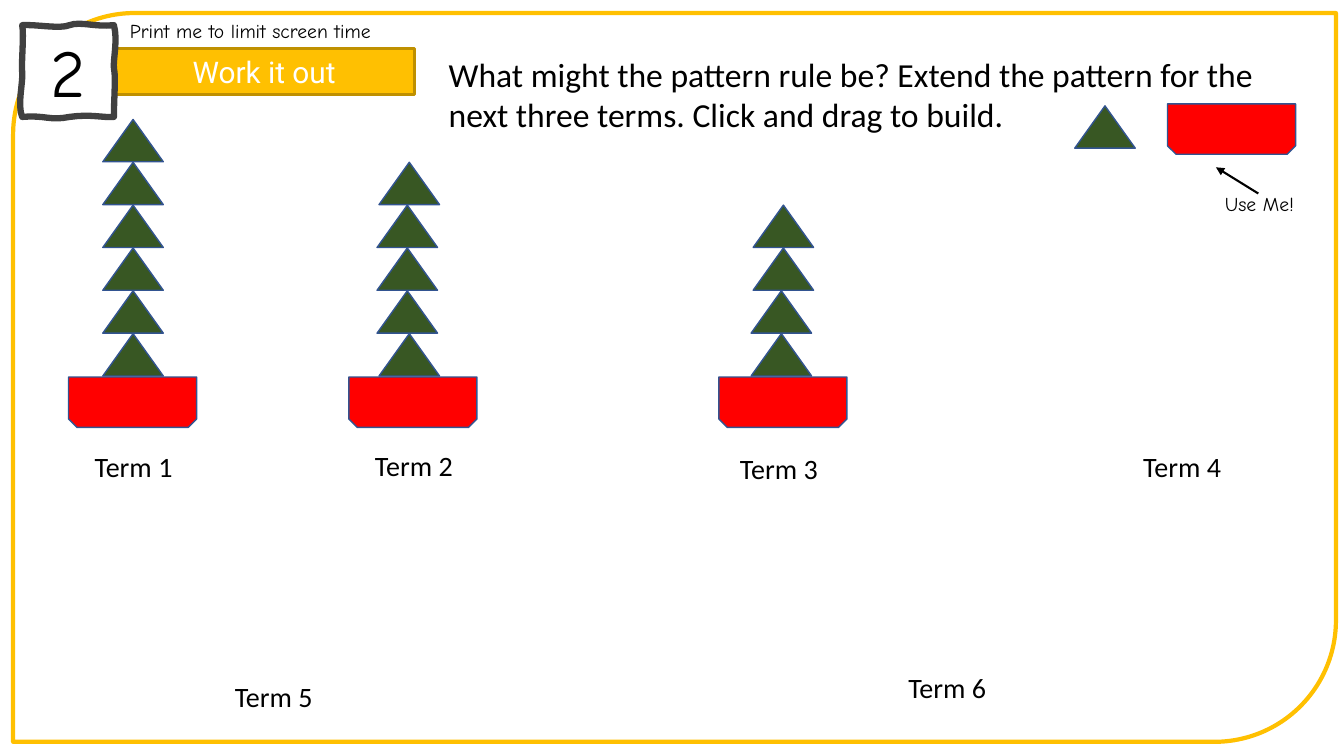
from pptx import Presentation
from pptx import util as u
from pptx.dml.color import RGBColor
from pptx.enum import shapes, text
from pptx.oxml.ns import qn
from lxml import etree

COLORS = {"gold": "FFC001", "dark_gold": "BF9000", "sketch": "404040", "red": "FF0000",
          "green": "385723", "edge": "325491", "white": "FFFFFF", "black": "000000"}

QUESTION = ("What might the pattern rule be? Extend the pattern for the next three terms. "
            "Click and drag to build.")

# Text, left, top, width, height, size, font
LABELS = [
    ("Term 1", 0.84, 4.41, 1.11, 0.44, 20, "Calibri"),
    ("Term 2", 3.62, 4.4, 0.99, 0.44, 20, "Calibri"),
    ("Term 3", 7.24, 4.43, 1.02, 0.44, 20, "Calibri"),
    ("Term 4", 11.24, 4.41, 0.99, 0.44, 20, "Calibri"),
    ("Term 5", 2.23, 6.69, 0.99, 0.44, 20, "Calibri"),
    ("Term 6", 8.91, 6.6, 0.99, 0.44, 20, "Calibri"),
    ("Print me to limit screen time", 1.19, 0.14, 3.14, 0.34, 14, "Comic Neue"),
    ("Use Me!", 12.05, 1.86, 1, 0.34, 14, "Comic Neue"),
]

# Pot left edge, then the left edge of each triangle from the bottom up
TREES = [
    (0.68, [1.02] * 6),
    (3.46, [3.76, 3.74, 3.74, 3.74, 3.76]),
    (7.13, [7.45, 7.45, 7.47, 7.47]),
]
POT_TOP, LOWEST_TRIANGLE, TRIANGLE_STEP = 3.74, 3.31, 0.425

# Hand-drawn square: a start point, then cubic curves (two controls and an end)
SKETCH_START = (0.22, 0.25)
SKETCH_CURVES = [
    ((0.36, 0.24), (0.59, 0.29), (0.69, 0.25)),
    ((0.8, 0.21), (0.93, 0.27), (1.13, 0.25)),
    ((1.17, 0.4), (1.12, 0.59), (1.13, 0.68)),
    ((1.15, 0.77), (1.13, 0.95), (1.13, 1.16)),
    ((1.03, 1.17), (0.9, 1.13), (0.69, 1.16)),
    ((0.49, 1.2), (0.45, 1.14), (0.22, 1.16)),
    ((0.17, 1.04), (0.23, 0.82), (0.22, 0.72)),
    ((0.21, 0.62), (0.24, 0.35), (0.22, 0.25)),
]
CURVE_STEPS = 8

prs = Presentation()
prs.slide_width, prs.slide_height = u.Inches(13.33), u.Inches(7.5)
s = prs.slides.add_slide(prs.slide_layouts[5])


def rgb(name):
    return RGBColor.from_string(COLORS[name])


def style(sp, fill, line, width):
    sp.shadow.inherit = False
    if fill:
        sp.fill.solid()
        sp.fill.fore_color.rgb = rgb(fill)
    else:
        sp.fill.background()
    sp.line.color.rgb = rgb(line)
    sp.line.width = u.Pt(width)


def add_shape(kind, box, fill, line, width):
    sp = s.shapes.add_shape(kind, *map(u.Inches, box))
    style(sp, fill, line, width)
    return sp


def write(sp, words, size, font, color="black", align=text.PP_ALIGN.LEFT,
          anchor=text.MSO_ANCHOR.TOP):
    tf = sp.text_frame
    tf.word_wrap = True
    tf.auto_size = text.MSO_AUTO_SIZE.NONE
    tf.vertical_anchor = anchor
    p = tf.paragraphs[0]
    p.alignment = align
    r = p.add_run()
    r.text = words
    r.font.size, r.font.name = u.Pt(size), font
    r.font.color.rgb = rgb(color)


def add_triangle(left, top):
    add_shape(shapes.MSO_SHAPE.ISOSCELES_TRIANGLE, (left, top, 0.6, 0.42), "green", "edge", 1)


def add_pot(left, top):
    sp = add_shape(shapes.MSO_SHAPE.SNIP_2_SAME_RECTANGLE, (left, top, 1.27, 0.5),
                   "red", "edge", 1)
    sp.rotation = 180


def curve_points(start, curves):
    points = []
    for c1, c2, end in curves:
        for i in range(1, CURVE_STEPS + 1):
            t = i / CURVE_STEPS
            points.append(tuple(
                u.Inches((1 - t) ** 3 * a + 3 * (1 - t) ** 2 * t * b
                         + 3 * (1 - t) * t ** 2 * c + t ** 3 * d)
                for a, b, c, d in zip(start, c1, c2, end)))
        start = end
    return points


# Page border and heading banner
add_shape(shapes.MSO_SHAPE.ROUND_2_DIAG_RECTANGLE, (0.13, 0.13, 13.12, 7.23), None, "gold", 3)
banner = add_shape(shapes.MSO_SHAPE.RECTANGLE, (1.13, 0.48, 2.98, 0.46),
                   "gold", "dark_gold", 2.25)
write(banner, "Work it out", 21.3, "Roboto", "white", text.PP_ALIGN.CENTER,
      text.MSO_ANCHOR.MIDDLE)

# Numbered square
builder = s.shapes.build_freeform(*map(u.Inches, SKETCH_START))
builder.add_line_segments(curve_points(SKETCH_START, SKETCH_CURVES), close=True)
square = builder.convert_to_shape()
style(square, "white", "sketch", 4.5)
write(square, "2", 48, "Comic Neue", "black", text.PP_ALIGN.CENTER, text.MSO_ANCHOR.MIDDLE)

# Question
title = s.shapes.title
title.left, title.top, title.width, title.height = map(u.Inches, (4.35, 0.48, 8.24, 0.91))
write(title, QUESTION, 24, "Calibri")
title.text_frame.paragraphs[0].line_spacing = 1.0

# Labels
for words, left, top, width, height, size, font in LABELS:
    box = s.shapes.add_textbox(*map(u.Inches, (left, top, width, height)))
    write(box, words, size, font)

# Trees
for pot_left, triangle_lefts in TREES:
    add_pot(pot_left, POT_TOP)
    for i, left in enumerate(triangle_lefts):
        add_triangle(left, LOWEST_TRIANGLE - i * TRIANGLE_STEP)

# Pieces to drag, with their arrow
add_pot(11.58, 1.03)
add_triangle(10.66, 1.05)
arrow = s.shapes.add_connector(shapes.MSO_CONNECTOR.STRAIGHT,
                               *map(u.Inches, (12.48, 1.92, 12.06, 1.66)))
arrow.line.color.rgb = rgb("black")
arrow.line.width = u.Pt(1.5)
etree.SubElement(arrow.line._get_or_add_ln(), qn("a:tailEnd"), type="triangle")
etree.SubElement(arrow._element.spPr, qn("a:effectLst"))

prs.save("out.pptx")
